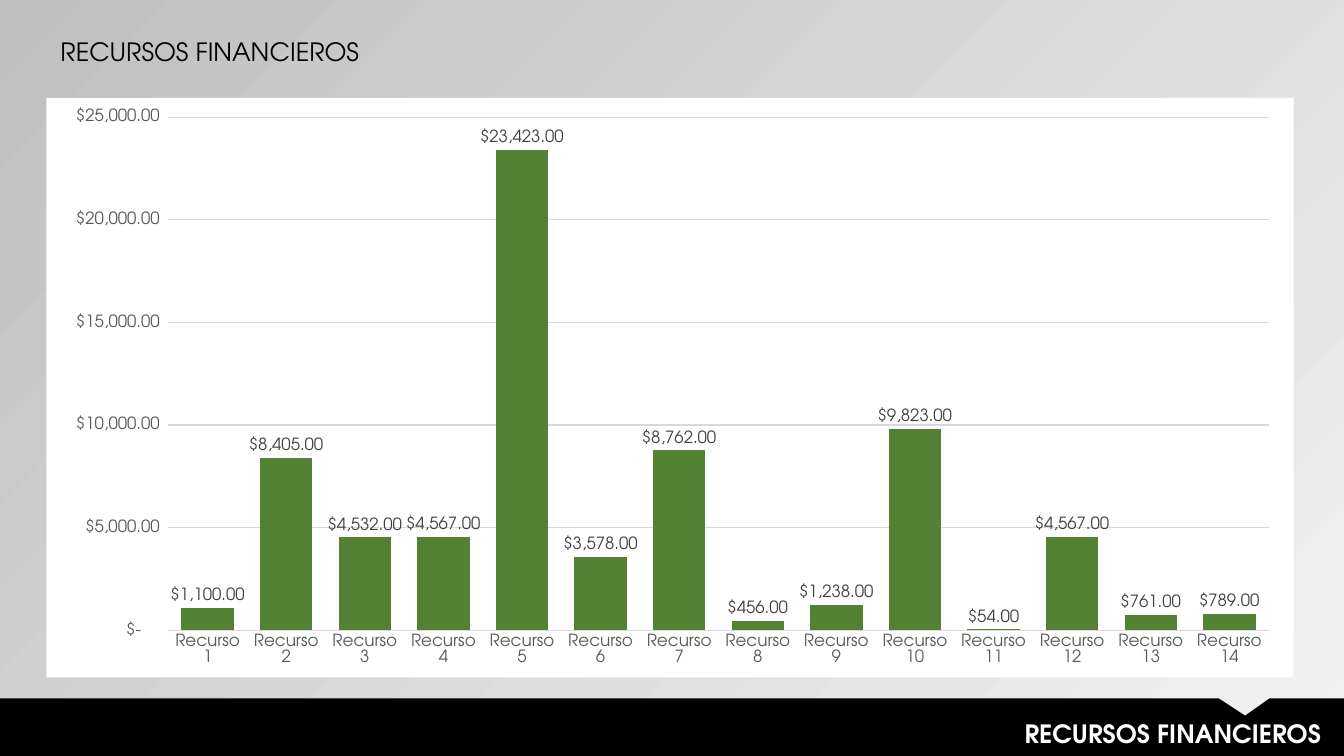
from dataclasses import dataclass

from lxml.etree import SubElement
from pptx import Presentation
from pptx.chart.data import CategoryChartData
from pptx.dml.color import RGBColor
from pptx.enum.chart import XL_CHART_TYPE, XL_LABEL_POSITION, XL_TICK_MARK
from pptx.enum.text import MSO_ANCHOR, PP_ALIGN
from pptx.oxml import parse_xml
from pptx.oxml.ns import nsdecls, qn
from pptx.shapes.autoshape import Shape
from pptx.slide import Slide
from pptx.text.text import Font
from pptx.util import Inches, Pt


@dataclass(frozen=True)
class Theme:
    font: str = "TeX Gyre Adventor"
    black: str = "000000"
    white: str = "FFFFFF"
    bar: str = "548235"
    axis_text: str = "595959"
    label_text: str = "404040"
    grid: str = "D9D9D9"
    light: str = "F2F2F2"
    shade: str = "BFBFBF"
    heading_size: int = 18
    chart_size: int = 12


@dataclass(frozen=True)
class Heading:
    text: str
    left: float
    top: float
    width: float
    height: float
    color: str
    bold: bool
    align: PP_ALIGN


THEME = Theme()
SLIDE_WIDTH, SLIDE_HEIGHT = 13.33, 7.5
FOOTER_TOP = 6.93
FOOTER_NOTCH = [(12.09, FOOTER_TOP), (12.35, 7.1), (12.59, FOOTER_TOP)]
TOPIC = "RECURSOS FINANCIEROS"
TOP_HEADING = Heading(TOPIC, 0.5, 0.31, 4.44, 0.4, THEME.black, False, PP_ALIGN.LEFT)
FOOTER_HEADING = Heading(TOPIC, 4.14, 7.08, 9.06, 0.4, THEME.white, True, PP_ALIGN.RIGHT)
AMOUNTS = [1100, 8405, 4532, 4567, 23423, 3578, 8762, 456, 1238, 9823, 54, 4567, 761, 789]
MONEY = '_("$"* #,##0.00_);_("$"* \\(#,##0.00\\);_("$"* "-"??_);_(@_)'


def rgb(color: str) -> RGBColor:
    return RGBColor.from_string(color)


def style_font(font: Font, size: int, color: str, bold: bool = False) -> None:
    font.name = THEME.font
    font.size = Pt(size)
    font.bold = bold
    font.color.rgb = rgb(color)


def paint_background(slide: Slide) -> None:
    fill = slide.background.fill
    fill.gradient()
    fill.gradient_angle = 135
    light_stop, shade_stop = fill.gradient_stops
    light_stop.position, shade_stop.position = 0, 1
    light_stop.color.rgb = rgb(THEME.light)
    shade_stop.color.rgb = rgb(THEME.shade)
    light_color = next(slide.background.fill._xPr.iter(qn("a:srgbClr")))
    SubElement(light_color, qn("a:alpha"), val="40000")


def draw_footer(slide: Slide) -> None:
    """Draw the bottom band with its notch in the upper edge."""
    outline = [*FOOTER_NOTCH, (SLIDE_WIDTH, FOOTER_TOP),
               (SLIDE_WIDTH, SLIDE_HEIGHT), (0, SLIDE_HEIGHT)]
    builder = slide.shapes.build_freeform(0, Inches(FOOTER_TOP))
    builder.add_line_segments([(Inches(x), Inches(y)) for x, y in outline], close=True)
    footer = builder.convert_to_shape()
    footer.shadow.inherit = False
    footer.fill.solid()
    footer.fill.fore_color.rgb = rgb(THEME.black)
    footer.line.fill.background()


def write_heading(box: Shape, heading: Heading) -> None:
    box.left, box.top = Inches(heading.left), Inches(heading.top)
    box.width, box.height = Inches(heading.width), Inches(heading.height)
    frame = box.text_frame
    frame.word_wrap = True
    frame.vertical_anchor = MSO_ANCHOR.TOP
    paragraph = frame.paragraphs[0]
    paragraph.alignment = heading.align
    run = paragraph.add_run()
    run.text = heading.text
    style_font(run.font, THEME.heading_size, heading.color, heading.bold)


def draw_resource_chart(slide: Slide) -> None:
    data = CategoryChartData(number_format=MONEY)
    data.categories = [f"Recurso {number}" for number in range(1, len(AMOUNTS) + 1)]
    data.add_series("Series 1", AMOUNTS)
    chart = slide.shapes.add_chart(
        XL_CHART_TYPE.COLUMN_CLUSTERED,
        Inches(0.46), Inches(0.97), Inches(12.37), Inches(5.75), data).chart
    chart.has_title = False
    chart.has_legend = False
    style_font(chart.font, 10, THEME.black)
    chart._chartSpace.chart.addnext(parse_xml(
        f'<c:spPr {nsdecls("c", "a")}><a:solidFill><a:srgbClr val="{THEME.white}"/>'
        '</a:solidFill><a:ln><a:noFill/></a:ln></c:spPr>'))

    for axis in (chart.category_axis, chart.value_axis):
        axis.major_tick_mark = axis.minor_tick_mark = XL_TICK_MARK.NONE
        style_font(axis.tick_labels.font, THEME.chart_size, THEME.axis_text)
    chart.value_axis.format.line.fill.background()
    chart.value_axis.tick_labels.number_format = MONEY
    chart.value_axis.tick_labels.number_format_is_linked = False
    for line in (chart.category_axis.format.line,
                 chart.value_axis.major_gridlines.format.line):
        line.color.rgb = rgb(THEME.grid)
        line.width = Pt(0.75)

    plot = chart.plots[0]
    plot.gap_width = 50
    plot.vary_by_categories = False
    amounts = plot.series[0]
    amounts.invert_if_negative = False
    amounts.format.fill.solid()
    amounts.format.fill.fore_color.rgb = rgb(THEME.bar)
    labels = amounts.data_labels
    labels.show_value = True
    labels.position = XL_LABEL_POSITION.OUTSIDE_END
    labels.number_format = MONEY
    labels.number_format_is_linked = False
    style_font(labels.font, THEME.chart_size, THEME.label_text)


def main() -> None:
    deck = Presentation()
    deck.slide_width, deck.slide_height = Inches(SLIDE_WIDTH), Inches(SLIDE_HEIGHT)
    slide = deck.slides.add_slide(deck.slide_layouts[5])
    paint_background(slide)
    draw_footer(slide)
    write_heading(slide.shapes.add_textbox(0, 0, 0, 0), FOOTER_HEADING)
    draw_resource_chart(slide)
    write_heading(slide.shapes.title, TOP_HEADING)
    deck.save("out.pptx")


if __name__ == "__main__":
    main()
